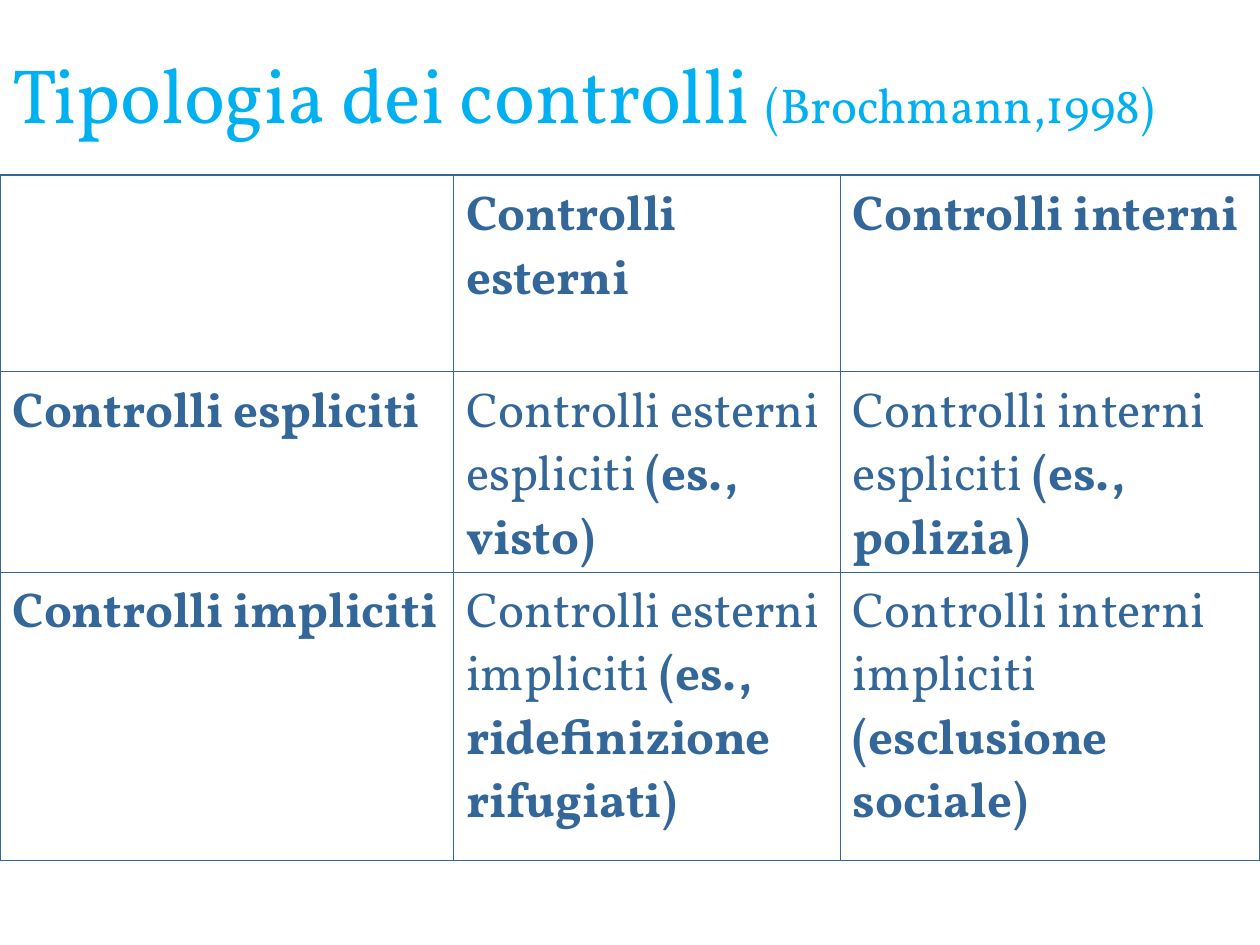
from lxml import etree
from pptx import Presentation
from pptx.dml.color import RGBColor
from pptx.enum.text import MSO_ANCHOR
from pptx.oxml.ns import qn
from pptx.util import Inches, Pt

BOTTOM = MSO_ANCHOR.BOTTOM
FACE, SKY, BLUE = "Vollkorn", "00B0F0", "336699"
THIN, THICK = Pt(0.45), Pt(1.08)


def style(font, size, color, bold=False):
    font.name, font.size, font.bold = FACE, Pt(size), bold
    font.color.rgb = RGBColor.from_string(color)


def border(cell, side, width):
    line = etree.SubElement(cell._tc.get_or_add_tcPr(), qn("a:ln" + side), w=str(width))
    fill = etree.SubElement(line, qn("a:solidFill"))
    etree.SubElement(fill, qn("a:srgbClr"), val=BLUE)


deck = Presentation()
deck.slide_width, deck.slide_height = Inches(10), Inches(7.5)
slide = deck.slides.add_slide(deck.slide_layouts[6])

# Title
box = slide.shapes.add_textbox(0, Inches(0.27), deck.slide_width, Inches(0.88))
frame = box.text_frame
frame.word_wrap = True
frame.vertical_anchor = BOTTOM
for text, size in (("Tipologia dei controlli ", 44), ("(Brochmann,1998)", 28)):
    run = frame.paragraphs[0].add_run()
    run.text = text
    style(run.font, size, SKY)

# Table: each cell holds a plain part and a bold part
cols, rows = (3.6, 3.07, 3.33), (1.56, 1.59, 2.29)
cells = (
    (("", ""), ("", "Controlli esterni"), ("", "Controlli interni")),
    (("", "Controlli espliciti"),
     ("Controlli esterni espliciti", " (es., visto)"),
     ("Controlli interni espliciti", " (es., polizia)")),
    (("", "Controlli impliciti"),
     ("Controlli esterni impliciti", " (es., ridefinizione rifugiati)"),
     ("Controlli interni impliciti", " (esclusione sociale)")),
)
table = slide.shapes.add_table(len(rows), len(cols), 0, Inches(1.39),
                               Inches(sum(cols)), Inches(sum(rows))).table
table.first_row = table.horz_banding = False
for col, width in zip(table.columns, cols):
    col.width = Inches(width)
for row, height in zip(table.rows, rows):
    row.height = Inches(height)

for r, line in enumerate(cells):
    for c, parts in enumerate(line):
        cell = table.cell(r, c)
        cell.margin_top = Inches(0.07)
        para = cell.text_frame.paragraphs[0]
        para.line_spacing = 0.93
        style(para.font, 28, BLUE)
        for text, bold in zip(parts, (False, True)):
            if text:
                run = para.add_run()
                run.text = text
                style(run.font, 28, BLUE, bold)
        # Thick lines on the outer edge, thin ones inside
        edges = {"L": c == 0, "R": c == len(cols) - 1,
                 "T": r == 0, "B": r == len(rows) - 1}
        for side, outer in edges.items():
            border(cell, side, THICK if outer else THIN)
        cell.fill.background()

deck.save("out.pptx")
